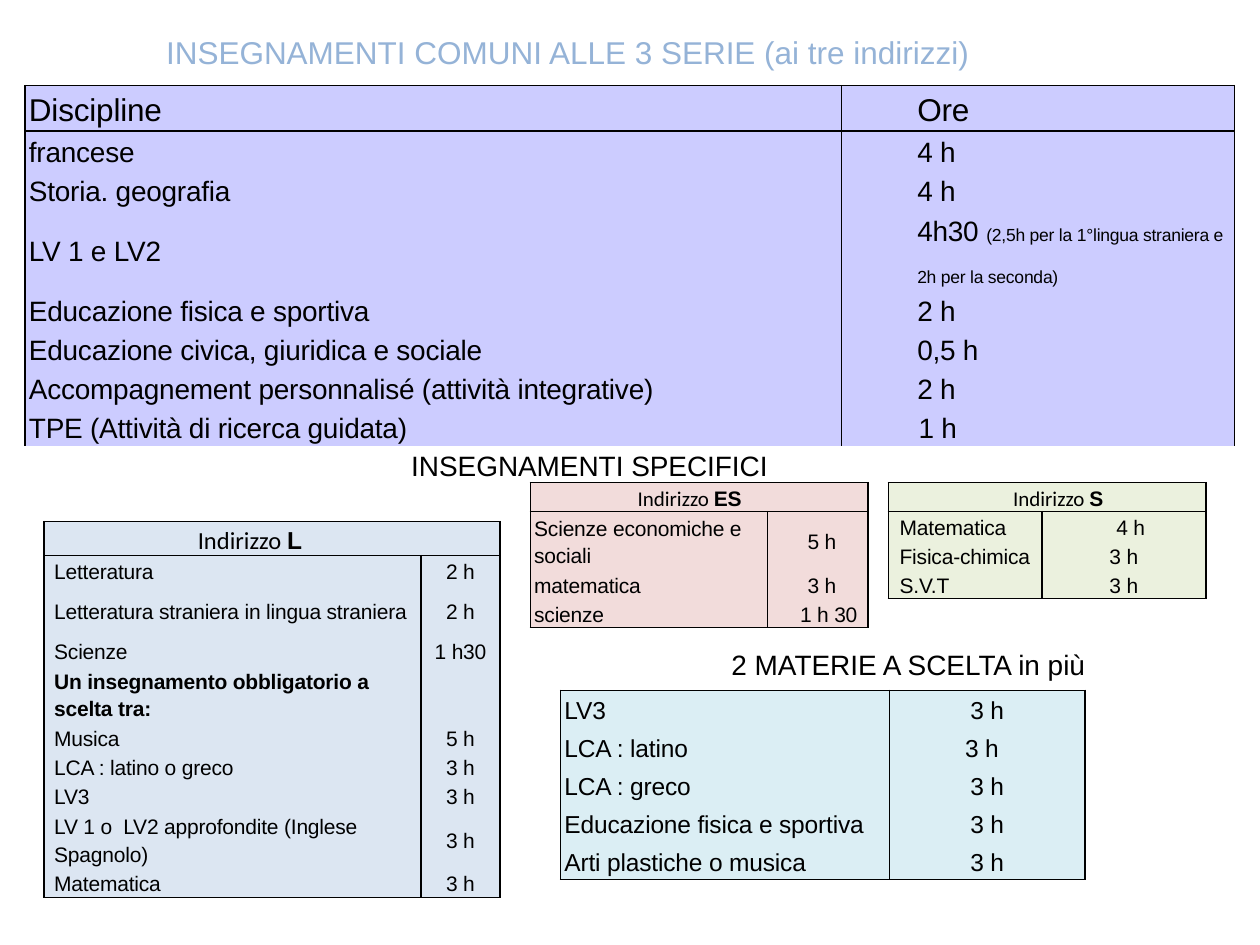
from dataclasses import dataclass
from typing import Optional

from lxml import etree
from pptx import Presentation
from pptx import util as u
from pptx.dml.color import RGBColor
from pptx.enum import text
from pptx.oxml import ns

BLACK = "000000"


@dataclass
class Row:
    label: str
    hours: str = ""
    height: float = 0.23
    indent: Optional[float] = None
    size: Optional[int] = None
    bold: bool = False
    notes: tuple[str, ...] = ()


@dataclass
class Grid:
    left: float
    top: float
    cols: tuple[float, float]
    fill: str
    size: int
    label_indent: float
    rows: list[Row]
    track: str = ""
    track_indent: float = 0
    track_size: int = 12
    track_height: float = 0.23
    header_rule: bool = True
    bottom_rule: bool = True


def rgb(color: str) -> RGBColor:
    return RGBColor.from_string(color)


def add_text(p, content: str, *, size: int, font: str = "Arial", color: str = BLACK,
             bold: bool = False, spacing: int = 0) -> None:
    r = p.add_run()
    r.text = content
    r.font.size = u.Pt(size)
    r.font.name = font
    r.font.bold = bold
    r.font.color.rgb = rgb(color)
    if spacing:
        r.font._element.set("spc", str(spacing))


def add_heading(s, content: str, left: float, top: float, width: float, height: float,
                size: int, color: str = BLACK, align=text.PP_ALIGN.CENTER) -> None:
    tf = s.shapes.add_textbox(*map(u.Inches, (left, top, width, height))).text_frame
    tf.word_wrap = True
    p = tf.paragraphs[0]
    p.alignment = align
    add_text(p, content, size=size, color=color)


def format_paragraph(p, indent: Optional[float]) -> None:
    p.line_spacing = 1.15
    p.space_after = u.Pt(10)
    if indent is None:
        p.alignment = text.PP_ALIGN.CENTER
    else:
        p._p.get_or_add_pPr().set("marL", str(u.Inches(indent)))


def style_cell(cell, fill: str, top: bool, bottom: bool) -> None:
    cell.vertical_anchor = text.MSO_ANCHOR.MIDDLE
    cell.margin_left = cell.margin_right = cell.margin_top = cell.margin_bottom = 0
    props = cell._tc.get_or_add_tcPr()
    for side, shown in (("L", True), ("R", True), ("T", top), ("B", bottom)):
        ln = etree.SubElement(props, ns.qn(f"a:ln{side}"), w=str(u.Pt(1)))
        if shown:
            solid = etree.SubElement(ln, ns.qn("a:solidFill"))
            etree.SubElement(solid, ns.qn("a:srgbClr"), val=BLACK)
        else:
            etree.SubElement(ln, ns.qn("a:noFill"))
    cell.fill.solid()
    cell.fill.fore_color.rgb = rgb(fill)


def write_row(cells, row: Row, grid: Grid) -> None:
    size = row.size or grid.size
    p = cells[0].text_frame.paragraphs[0]
    format_paragraph(p, grid.label_indent)
    add_text(p, row.label, size=size, bold=row.bold, spacing=-10)
    if not row.hours:
        return
    tf = cells[1].text_frame
    p = tf.paragraphs[0]
    format_paragraph(p, row.indent)
    add_text(p, row.hours, size=size, spacing=-10)
    for i, note in enumerate(row.notes):
        if i:
            p = tf.add_paragraph()
            format_paragraph(p, row.indent)
        add_text(p, note, size=10, spacing=-10)


def add_grid(s, grid: Grid) -> None:
    offset = 1 if grid.track else 0
    heights = [grid.track_height] * offset + [row.height for row in grid.rows]
    last = len(heights) - 1
    table = s.shapes.add_table(
        len(heights), 2, u.Inches(grid.left), u.Inches(grid.top),
        u.Inches(sum(grid.cols)), u.Inches(sum(heights))).table
    table.first_row = table.horz_banding = False
    for col, width in zip(table.columns, grid.cols):
        col.width = u.Inches(width)
    for i, (line, height) in enumerate(zip(table.rows, heights)):
        line.height = u.Inches(height)
        for cell in line.cells:
            style_cell(cell, grid.fill,
                       top=i == 0 or (i == 1 and grid.header_rule),
                       bottom=(i == 0 and grid.header_rule) or (i == last and grid.bottom_rule))
    if grid.track:
        head = table.cell(0, 0)
        head.merge(table.cell(0, 1))
        p = head.text_frame.paragraphs[0]
        format_paragraph(p, grid.track_indent)
        add_text(p, "Indirizzo ", size=grid.track_size, font="Calibri")
        add_text(p, grid.track, size=grid.track_size, bold=True, spacing=-10)
    for i, row in enumerate(grid.rows, offset):
        write_row([table.cell(i, 0), table.cell(i, 1)], row, grid)


COMMON = Grid(0.2, 0.68, (6.48, 3.12), "CCCCFF", 16, 0.03, [
    Row("Discipline", "Ore", 0.36, 0.6, size=18),
    Row("francese", "4 h", 0.31, 0.6),
    Row("Storia. geografia", "4 h", 0.31, 0.6),
    Row("LV 1 e LV2", "4h30 ", 0.64, 0.6,
        notes=("(2,5h per la 1°lingua straniera e", "2h per la seconda)")),
    Row("Educazione fisica e sportiva", "2 h", 0.31, 0.6),
    Row("Educazione civica, giuridica e sociale", "0,5 h", 0.31, 0.6),
    Row("Accompagnement personnalisé (attività integrative)", "2 h", 0.31, 0.6),
    Row("TPE (Attività di ricerca guidata)", "1 h", 0.31, 0.61),
], bottom_rule=False)

TRACK_ES = Grid(4.21, 3.83, (1.88, 0.8), "F2DCDB", 12, 0.03, [
    Row("Scienze economiche e sociali", "5 h", 0.46, 0.32),
    Row("matematica", "3 h", indent=0.32),
    Row("scienze", "1 h 30", indent=0.26),
], track="ES", track_indent=0.85)

TRACK_L = Grid(0.35, 4.14, (2.99, 0.63), "DCE6F2", 12, 0.08, [
    Row("Letteratura", "2 h"),
    Row("Letteratura straniera in lingua straniera", "2 h", 0.41),
    Row("Scienze", "1 h30"),
    Row("Un insegnamento obbligatorio a scelta tra:", height=0.46, bold=True),
    Row("Musica", "5 h"),
    Row("LCA : latino o greco", "3 h"),
    Row("LV3", "3 h"),
    Row("LV 1 o  LV2 approfondite (Inglese Spagnolo)", "3 h", 0.46),
    Row("Matematica", "3 h"),
], track="L", track_indent=1.22, track_size=14, track_height=0.27)

TRACK_S = Grid(7.05, 3.83, (1.22, 1.3), "EBF1DE", 12, 0.09, [
    Row("Matematica", "4 h", indent=0.59),
    Row("Fisica-chimica", "3 h"),
    Row("S.V.T", "3 h"),
], track="S", track_indent=0.99)

ELECTIVES = Grid(4.45, 5.48, (2.61, 1.55), "DBEEF4", 14, 0.03, [
    Row("LV3", "3 h", 0.3),
    Row("LCA : latino", "3 h", 0.3, 0.6),
    Row("LCA : greco", "3 h", 0.3),
    Row("Educazione fisica e sportiva", "3 h", 0.3),
    Row("Arti plastiche o musica", "3 h", 0.3),
], header_rule=False)


def main() -> None:
    prs = Presentation()
    prs.slide_width, prs.slide_height = u.Inches(10), u.Inches(7.5)
    s = prs.slides.add_slide(prs.slide_layouts[6])
    add_heading(s, "INSEGNAMENTI COMUNI ALLE 3 SERIE (ai tre indirizzi)",
                1.22, 0.21, 7.4, 0.4, 18, "95B3D7", text.PP_ALIGN.LEFT)
    for grid in (COMMON, TRACK_ES, TRACK_L, TRACK_S):
        add_grid(s, grid)
    add_heading(s, "INSEGNAMENTI SPECIFICI", 0.98, 3.51, 7.4, 0.37, 16)
    add_heading(s, "2 MATERIE A SCELTA in più", 4.69, 5.09, 5.04, 0.37, 16)
    add_grid(s, ELECTIVES)
    prs.save("out.pptx")


if __name__ == "__main__":
    main()
